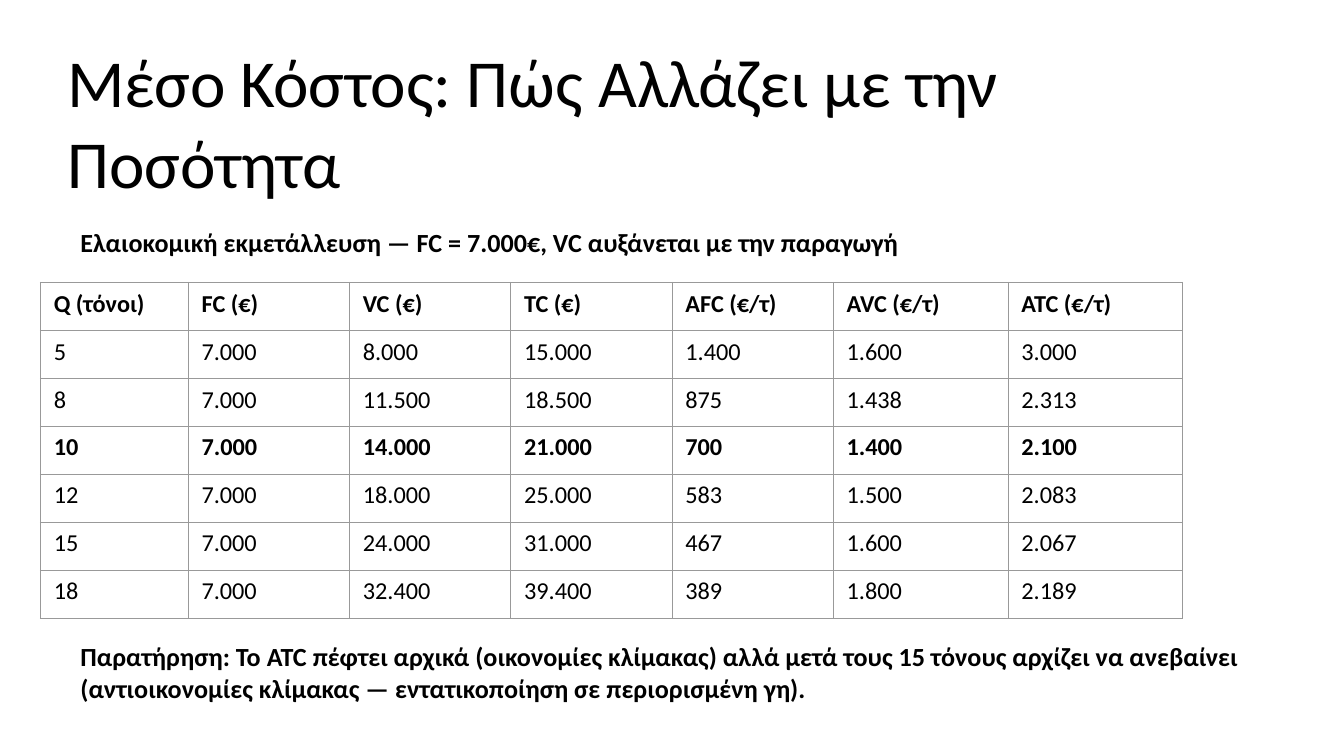
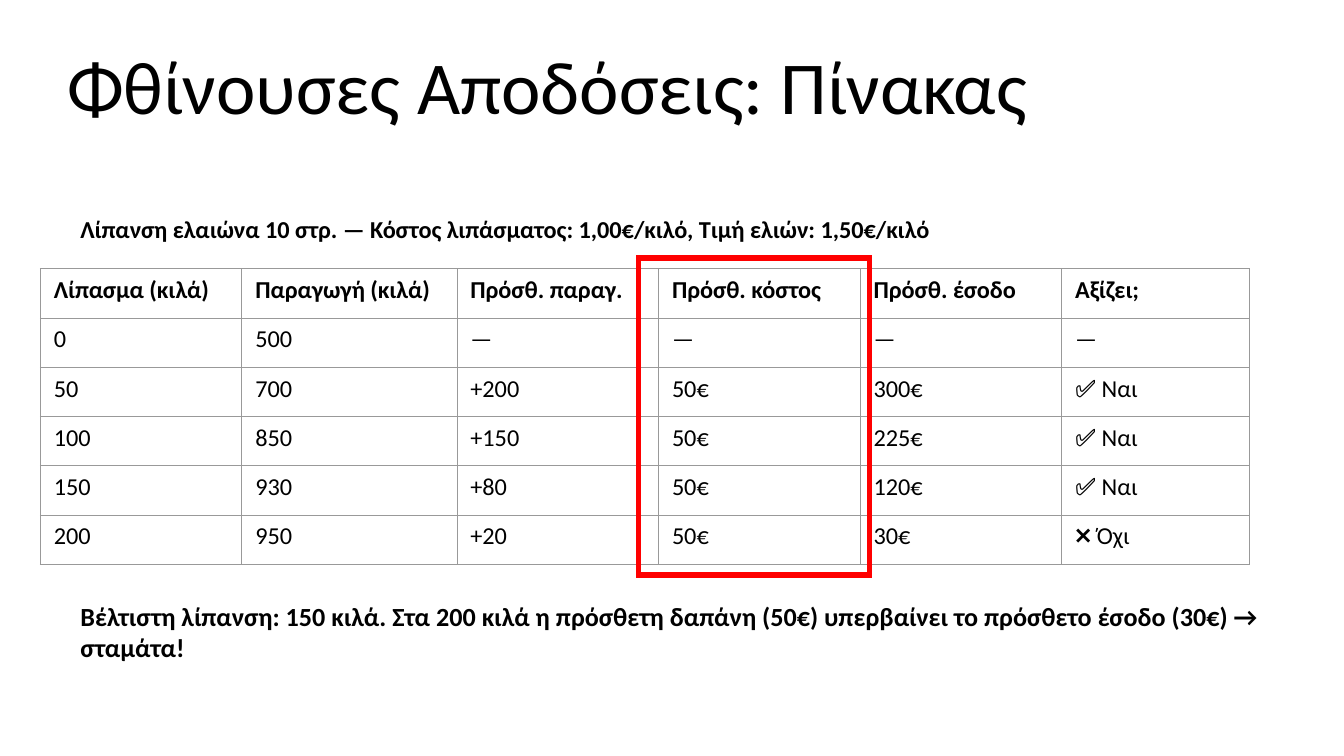
from lxml.etree import SubElement
from pptx import Presentation
from pptx.dml.color import RGBColor
from pptx.enum.shapes import MSO_SHAPE
from pptx.enum.text import MSO_ANCHOR as Anchor, MSO_AUTO_SIZE as AutoSize, PP_ALIGN as Align
from pptx.oxml.ns import qn
from pptx.util import Inches, Pt

FONT = "Calibri"
BLACK, GREY, RED = "000000", "999999", "FF0000"
LEFT, WIDTH = 0.5, 9
TABLE_LEFT = 0.3

slides = [
    dict(
        title="Μέσο Κόστος: Πώς Αλλάζει με την Ποσότητα",
        title_size=36,
        caption="Ελαιοκομική εκμετάλλευση — FC = 7.000€, VC αυξάνεται με την παραγωγή",
        caption_top=1.6,
        caption_size=14,
        table_top=2.1,
        table_height=2.5,
        columns=[1.1, 1.2, 1.2, 1.2, 1.2, 1.3, 1.3],
        bold_rows={0, 3},
        rows=[
            ["Q (τόνοι)", "FC (€)", "VC (€)", "TC (€)", "AFC (€/τ)", "AVC (€/τ)", "ATC (€/τ)"],
            ["5", "7.000", "8.000", "15.000", "1.400", "1.600", "3.000"],
            ["8", "7.000", "11.500", "18.500", "875", "1.438", "2.313"],
            ["10", "7.000", "14.000", "21.000", "700", "1.400", "2.100"],
            ["12", "7.000", "18.000", "25.000", "583", "1.500", "2.083"],
            ["15", "7.000", "24.000", "31.000", "467", "1.600", "2.067"],
            ["18", "7.000", "32.400", "39.400", "389", "1.800", "2.189"],
        ],
        note="Παρατήρηση: Το ATC πέφτει αρχικά (οικονομίες κλίμακας) αλλά μετά τους 15 τόνους "
             "αρχίζει να ανεβαίνει (αντιοικονομίες κλίμακας — εντατικοποίηση σε περιορισμένη γη).",
        note_top=4.7,
    ),
    dict(
        title="Φθίνουσες Αποδόσεις: Πίνακας",
        title_size=40,
        caption="Λίπανση ελαιώνα 10 στρ. — Κόστος λιπάσματος: 1,00€/κιλό, Τιμή ελιών: 1,50€/κιλό",
        caption_top=1.5,
        caption_size=13,
        table_top=2,
        table_height=2.2,
        columns=[1.5, 1.6, 1.5, 1.5, 1.5, 1.4],
        bold_rows={0},
        rows=[
            ["Λίπασμα (κιλά)", "Παραγωγή (κιλά)", "Πρόσθ. παραγ.",
             "Πρόσθ. κόστος", "Πρόσθ. έσοδο", "Αξίζει;"],
            ["0", "500", "—", "—", "—", "—"],
            ["50", "700", "+200", "50€", "300€", "✅ Ναι"],
            ["100", "850", "+150", "50€", "225€", "✅ Ναι"],
            ["150", "930", "+80", "50€", "120€", "✅ Ναι"],
            ["200", "950", "+20", "50€", "30€", "❌ Όχι"],
        ],
        note="Βέλτιστη λίπανση: 150 κιλά. Στα 200 κιλά η πρόσθετη δαπάνη (50€) "
             "υπερβαίνει το πρόσθετο έσοδο (30€) → σταμάτα!",
        note_top=4.4,
    ),
]


def colour(hex_value):
    return RGBColor.from_string(hex_value)


def write(frame, text, size=13, bold=False, anchor=Anchor.TOP):
    """Fill a text frame with one left-aligned, formatted paragraph."""
    frame.word_wrap = True
    frame.vertical_anchor = anchor
    para = frame.paragraphs[0]
    para.alignment = Align.LEFT
    span = para.add_run()
    span.text = text
    span.font.name = FONT
    span.font.size = Pt(size)
    span.font.bold = bold
    span.font.color.rgb = colour(BLACK)


deck = Presentation()
deck.slide_width = Inches(10)
deck.slide_height = Inches(10 * 9 / 16)
title_only = deck.slide_layouts[5]

for content in slides:
    page = deck.slides.add_slide(title_only)

    title = page.shapes.title
    title.left, title.top = Inches(LEFT), Inches(0.3)
    title.width, title.height = Inches(WIDTH), Inches(1.2)
    frame = title.text_frame
    frame.auto_size = AutoSize.NONE
    frame.margin_left = frame.margin_right = frame.margin_top = frame.margin_bottom = 0
    write(frame, content["title"], size=content["title_size"])

    for part, height, size in (("caption", 0.4, content["caption_size"]), ("note", 0.6, 14)):
        box = page.shapes.add_textbox(
            Inches(LEFT), Inches(content[part + "_top"]), Inches(WIDTH), Inches(height))
        write(box.text_frame, content[part], size=size, bold=True, anchor=Anchor.MIDDLE)

    rows, columns = content["rows"], content["columns"]
    table = page.shapes.add_table(
        len(rows), len(columns), Inches(TABLE_LEFT), Inches(content["table_top"]),
        Inches(sum(columns)), Inches(content["table_height"])).table
    table.first_row = table.horz_banding = False
    for column, width in zip(table.columns, columns):
        column.width = Inches(width)
    for row_number, texts in enumerate(rows):
        for column_number, text in enumerate(texts):
            cell = table.cell(row_number, column_number)
            write(cell.text_frame, text, bold=row_number in content["bold_rows"])
            properties = cell._tc.get_or_add_tcPr()
            for side in ("a:lnL", "a:lnR", "a:lnT", "a:lnB"):
                border = SubElement(properties, qn(side), w=str(Pt(0.5)))
                fill = SubElement(border, qn("a:solidFill"))
                SubElement(fill, qn("a:srgbClr"), val=GREY)
            cell.fill.background()

# Frame around the extra-cost column of the last table
cost_frame = page.shapes.add_shape(
    MSO_SHAPE.RECTANGLE, Inches(4.75), Inches(1.92), Inches(1.72), Inches(2.36))
cost_frame.shadow.inherit = False
cost_frame.fill.background()
cost_frame.line.color.rgb = colour(RED)
cost_frame.line.width = Pt(3)
outline = cost_frame._element.spPr.find(qn("a:ln"))
SubElement(outline, qn("a:miter"), lim="800000")

deck.save("out.pptx")
